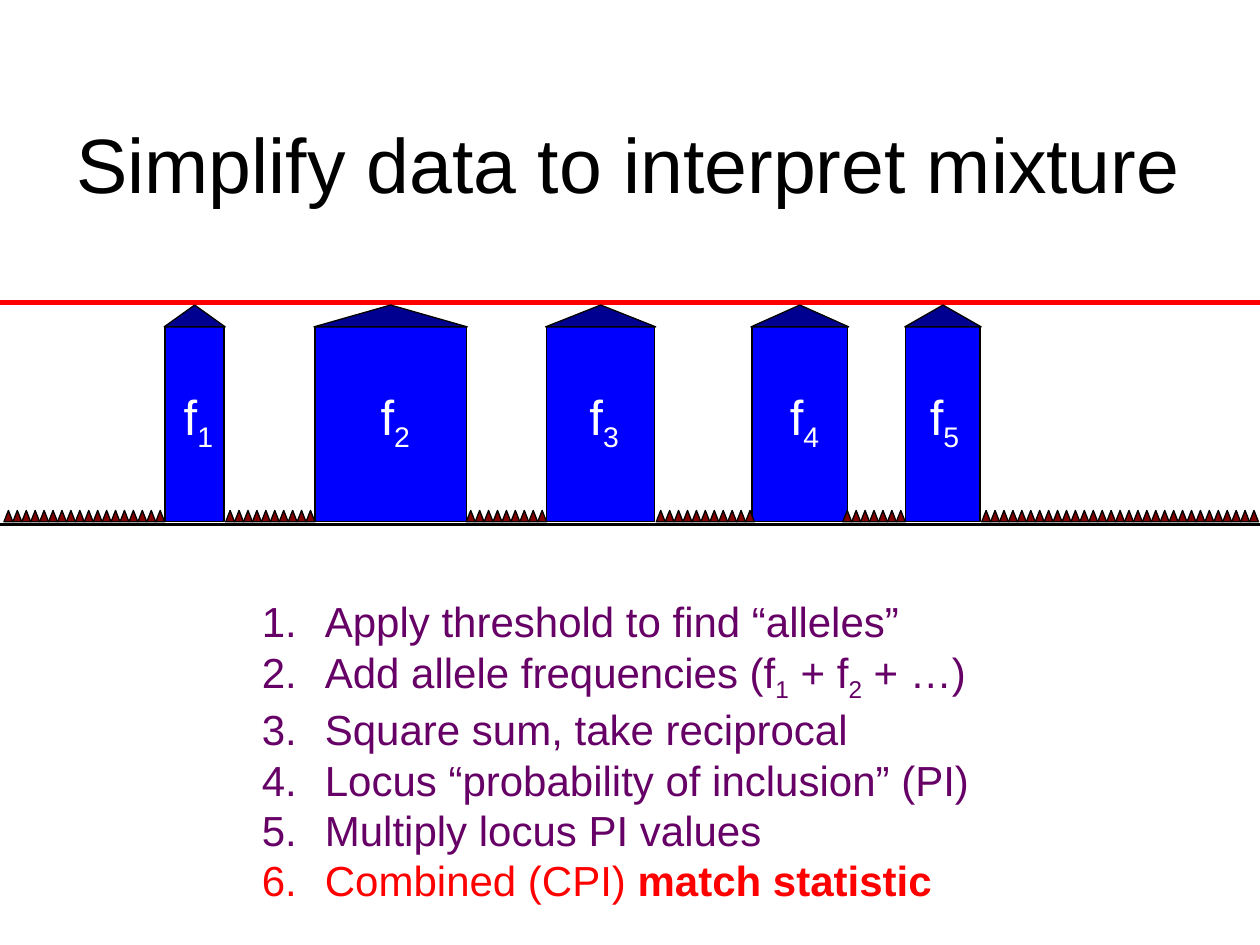
from lxml import etree
from pptx import Presentation
from pptx.dml.color import RGBColor
from pptx.enum.shapes import MSO_CONNECTOR, MSO_SHAPE
from pptx.enum.text import MSO_ANCHOR, MSO_AUTO_SIZE, PP_ALIGN
from pptx.oxml.ns import qn
from pptx.util import Cm, Pt

RECTANGLE = MSO_SHAPE.RECTANGLE
TRIANGLE = MSO_SHAPE.ISOSCELES_TRIANGLE
STRAIGHT = MSO_CONNECTOR.STRAIGHT
LEFT, CENTER = PP_ALIGN.LEFT, PP_ALIGN.CENTER
TOP, MIDDLE = MSO_ANCHOR.TOP, MSO_ANCHOR.MIDDLE

COLORS = {
    "black": "000000",
    "white": "FFFFFF",
    "red": "FF0000",
    "purple": "660066",
    "bar": "0000FF",
    "cap": "000090",
    "noise": "800000",
}
FONT = "Arial"

TITLE_BOX = (1.17, 1.7, 23.01, 3.18)
PEAKS_BOX = (0, 6.1, 25.4, 4.47)
STEPS_BOX = (5.03, 11.89, 16.03, 6.4)

# Each peak is bar left, bar width and label left.
PEAKS = [
    (3.33, 1.19, 3.02),
    (6.35, 3.05, 6.99),
    (11.02, 2.18, 11.2),
    (15.16, 1.93, 15.24),
    (18.26, 1.5, 18.06),
]
NOISE_RUNS = [(0.08, 18), (4.55, 10), (9.4, 9), (13.23, 11), (16.99, 7), (19.79, 31)]
NOISE_WIDTH = 0.18

SUBSCRIPT = {"subscript": True}
STEPS = [
    [("Apply threshold to find “alleles”", {})],
    [
        ("Add allele frequencies (f", {}),
        ("1", SUBSCRIPT),
        (" + f", {}),
        ("2", SUBSCRIPT),
        (" + …)", {}),
    ],
    [("Square sum, take reciprocal", {})],
    [("Locus “probability of inclusion” (PI)", {})],
    [("Multiply locus PI values", {})],
    [
        ("Combined (CPI) ", {"color": "red"}),
        ("match statistic", {"color": "red", "bold": True}),
    ],
]


def rgb(name):
    """Return the named colour."""
    return RGBColor.from_string(COLORS[name])


def add_run(paragraph, text, size, color, bold=False, subscript=False):
    """Append one formatted run to a paragraph."""
    run = paragraph.add_run()
    run.text = text
    run.font.name = FONT
    run.font.size = Pt(size)
    run.font.bold = bold
    run.font.color.rgb = rgb(color)
    if subscript:
        run.font._element.set("baseline", "-25000")


def number_paragraph(paragraph):
    """Give a paragraph a hanging automatic number."""
    properties = paragraph._p.get_or_add_pPr()
    indent = Cm(1.27)
    properties.set("marL", str(indent))
    properties.set("indent", str(-indent))
    numbering = etree.SubElement(properties, qn("a:buAutoNum"))
    numbering.set("type", "arabicPeriod")


def add_text(slide, box, paragraphs, size, color, align=LEFT, anchor=TOP,
             numbered=False, grow=True):
    """Add a text box whose paragraphs are lists of (text, format) runs."""
    shape = slide.shapes.add_textbox(*map(Cm, box))
    frame = shape.text_frame
    frame.word_wrap = True
    frame.vertical_anchor = anchor
    frame.auto_size = MSO_AUTO_SIZE.SHAPE_TO_FIT_TEXT if grow else MSO_AUTO_SIZE.NONE
    for index, runs in enumerate(paragraphs):
        paragraph = frame.add_paragraph() if index else frame.paragraphs[0]
        paragraph.alignment = align
        if numbered:
            number_paragraph(paragraph)
        for text, run_format in runs:
            add_run(paragraph, text, **{"size": size, "color": color, **run_format})


def add_outlined_shape(slide, kind, box, fill):
    """Add a filled shape with a thin black outline."""
    shape = slide.shapes.add_shape(kind, *map(Cm, box))
    shape.shadow.inherit = False
    shape.fill.solid()
    shape.fill.fore_color.rgb = rgb(fill)
    shape.line.color.rgb = rgb("black")
    shape.line.width = Pt(0.75)


def add_horizontal_line(slide, left, top, width, color, weight):
    """Add a horizontal line without a shadow."""
    line = slide.shapes.add_connector(
        STRAIGHT, Cm(left + width), Cm(top), Cm(left), Cm(top))
    line.line.color.rgb = rgb(color)
    line.line.width = Pt(weight)
    etree.SubElement(line._element.spPr, qn("a:effectLst"))


def add_title(slide, box):
    """Place the slide title."""
    add_text(slide, box, [[("Simplify data to interpret mixture", {})]],
             size=44, color="black", align=CENTER, anchor=MIDDLE, grow=False)


def add_peaks(slide, box):
    """Draw peaks cut off by a threshold, with noise along the baseline."""
    left, top, width, height = box
    add_horizontal_line(slide, left, top, width, "red", 3)
    for bar_left, bar_width, _ in PEAKS:
        add_outlined_shape(
            slide, RECTANGLE, (left + bar_left, top + 0.48, bar_width, 3.94), "bar")
    add_horizontal_line(slide, left, top + height, width, "black", 1.5)
    for bar_left, bar_width, _ in PEAKS:
        cap_box = (left + bar_left - 0.02, top + 0.05, bar_width + 0.04, 0.44)
        add_outlined_shape(slide, TRIANGLE, cap_box, "cap")
    for start, count in NOISE_RUNS:
        for index in range(count):
            noise_left = left + start + index * NOISE_WIDTH
            add_outlined_shape(
                slide, TRIANGLE, (noise_left, top + 4.19, NOISE_WIDTH, 0.23), "noise")
    for number, (_, _, label_left) in enumerate(PEAKS, 1):
        add_text(slide, (left + label_left, top + 1.57, 1.96, 1.45),
                 [[("f", {}), (str(number), SUBSCRIPT)]],
                 size=28, color="white", align=CENTER)


def add_steps(slide, box):
    """Place the numbered steps."""
    add_text(slide, box, STEPS, size=24, color="purple", numbered=True)


def main():
    """Build and save the presentation."""
    presentation = Presentation()
    presentation.slide_width = Cm(25.4)
    presentation.slide_height = Cm(19.05)
    slide = presentation.slides.add_slide(presentation.slide_layouts[6])
    add_title(slide, TITLE_BOX)
    add_steps(slide, STEPS_BOX)
    add_peaks(slide, PEAKS_BOX)
    presentation.save("out.pptx")


if __name__ == "__main__":
    main()
